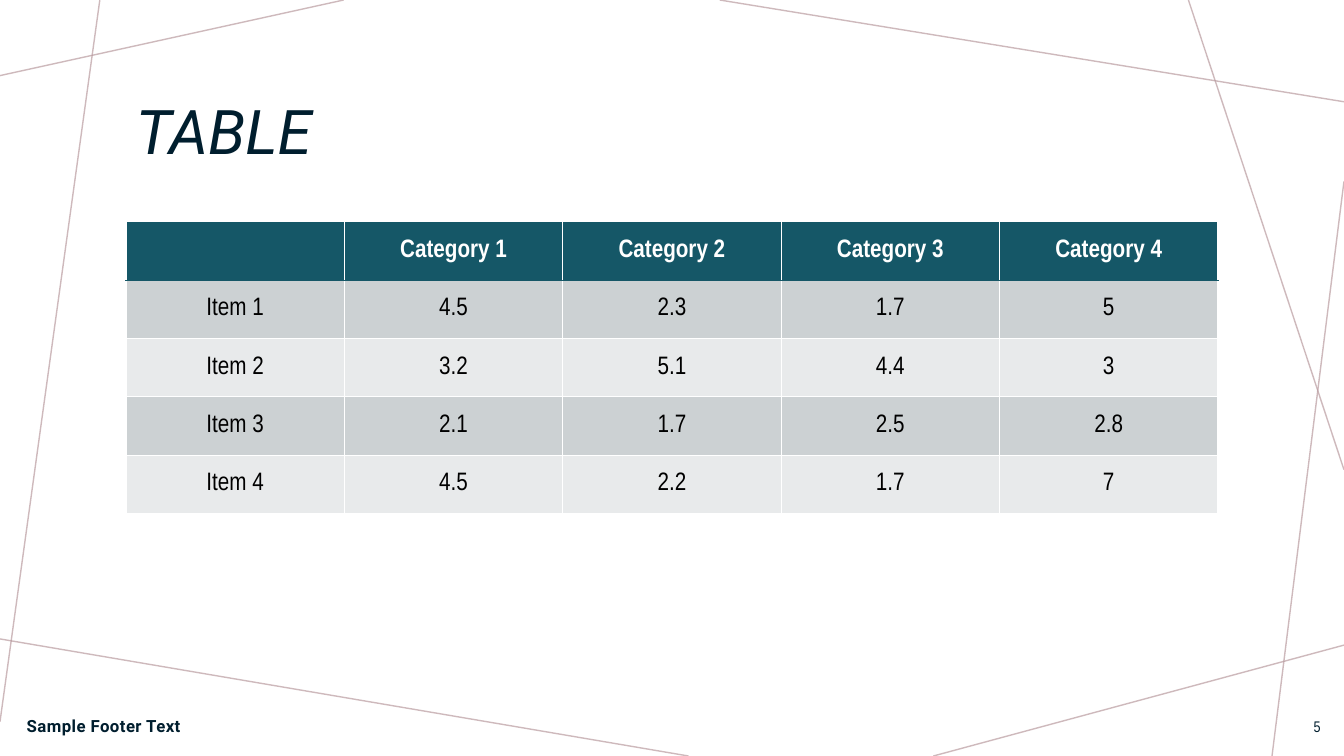
from dataclasses import dataclass

from lxml import etree
from pptx import Presentation
from pptx.dml.color import RGBColor
from pptx.enum import shapes, text
from pptx.oxml import ns
from pptx.util import Pt


@dataclass(frozen=True)
class Theme:
    ink: str = "001E2E"
    teal: str = "155767"
    white: str = "FFFFFF"
    black: str = "000000"
    rose: str = "BA9CA0"
    bands: tuple = ("CCD1D3", "E8EAEB")
    display: str = "Roboto"
    body: str = "Arial Narrow"
    title_size: int = 44
    table_size: int = 18
    footer_size: int = 12
    number_size: int = 11


theme = Theme()


def write(frame, words, font, size, color, bold=False, italic=False,
          align=text.PP_ALIGN.LEFT, line_spacing=None, tracking=None):
    frame.word_wrap = True
    para = frame.paragraphs[0]
    para.alignment = align
    para.line_spacing = line_spacing
    span = para.add_run()
    span.text = words
    span.font.name = font
    span.font.size = Pt(size)
    span.font.bold = bold
    span.font.italic = italic
    span.font.color.rgb = RGBColor.from_string(color)
    if tracking:
        span.font._element.set("spc", str(round(tracking * 100)))


def set_borders(cell, top, bottom):
    """Draw white side borders, and the given (color, points) above and below."""
    side = (theme.white, 1)
    edges = {"lnL": side, "lnR": side, "lnT": top, "lnB": bottom}
    properties = cell._tc.get_or_add_tcPr()
    for place, (tag, (color, points)) in enumerate(edges.items()):
        line = etree.Element(ns.qn(f"a:{tag}"), w=str(Pt(points)))
        fill = etree.SubElement(line, ns.qn("a:solidFill"))
        etree.SubElement(fill, ns.qn("a:srgbClr"), val=color)
        properties.insert(place, line)


deck = Presentation()
deck.slide_width, deck.slide_height = Pt(960), Pt(540)
page = deck.slides.add_slide(deck.slide_layouts[6])
page.background.fill.solid()
page.background.fill.fore_color.rgb = RGBColor.from_string(theme.white)

# Background lines: x and y of the start, x and y of the end
background_lines = [
    (245.5, 0, 0, 54),
    (71.3, 0, 0, 515.5),
    (491.8, 540, 0, 456.4),
    (960, 460.8, 666.7, 540),
    (960, 129.6, 908.6, 540),
    (960, 335.5, 848.9, 0),
    (960, 72.7, 514.1, 0),
]
for ends in background_lines:
    line = page.shapes.add_connector(
        shapes.MSO_CONNECTOR.STRAIGHT, *map(Pt, ends))
    line.line.width = Pt(1)
    line.line.color.rgb = RGBColor.from_string(theme.rose)
    color = line._element.spPr.find(".//" + ns.qn("a:srgbClr"))
    etree.SubElement(color, ns.qn("a:alpha"), val="70000")
    etree.SubElement(line._element.spPr, ns.qn("a:effectLst"))

# Title, footer and page number
labels = [
    ((90, 42, 780, 108), "TABLE",
     dict(font=theme.display, size=theme.title_size, italic=True,
          line_spacing=0.9)),
    ((12, 504, 354, 29), "Sample Footer Text",
     dict(font=theme.display, size=theme.footer_size, bold=True,
          tracking=0.3)),
    ((914, 504, 36.5, 29), "5",
     dict(font=theme.body, size=theme.number_size,
          align=text.PP_ALIGN.RIGHT)),
]
for bounds, words, style in labels:
    box = page.shapes.add_textbox(*map(Pt, bounds))
    box.text_frame.vertical_anchor = text.MSO_ANCHOR.MIDDLE
    write(box.text_frame, words, color=theme.ink, **style)

# Table
rows = [
    ("", "Category 1", "Category 2", "Category 3", "Category 4"),
    ("Item 1", "4.5", "2.3", "1.7", "5"),
    ("Item 2", "3.2", "5.1", "4.4", "3"),
    ("Item 3", "2.1", "1.7", "2.5", "2.8"),
    ("Item 4", "4.5", "2.2", "1.7", "7"),
]
table = page.shapes.add_table(
    len(rows), len(rows[0]), Pt(90), Pt(158.4), Pt(780), Pt(208.5)).table
white_rule, teal_rule = (theme.white, 1), (theme.teal, 0.75)
for r, row in enumerate(rows):
    header = r == 0
    for c, words in enumerate(row):
        cell = table.cell(r, c)
        cell.vertical_anchor = text.MSO_ANCHOR.MIDDLE
        cell.fill.solid()
        cell.fill.fore_color.rgb = RGBColor.from_string(
            theme.teal if header else theme.bands[(r - 1) % 2])
        set_borders(cell,
                    top=teal_rule if r == 1 else white_rule,
                    bottom=teal_rule if header else white_rule)
        if words:
            write(cell.text_frame, words, theme.body, theme.table_size,
                  theme.white if header else theme.black, bold=header,
                  align=text.PP_ALIGN.CENTER)

deck.save("out.pptx")
